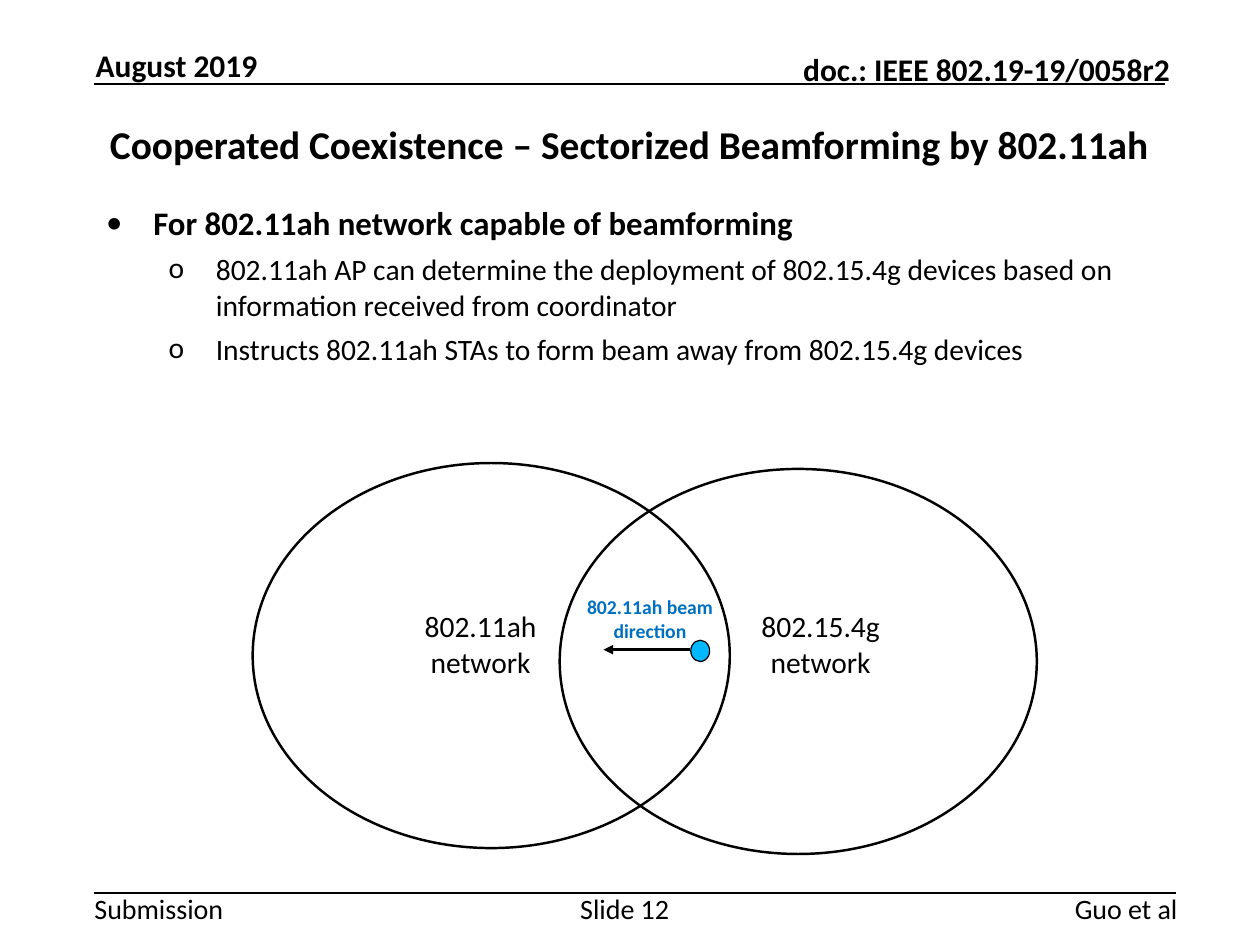
"""Build the slide on sectorized beamforming between two overlapping networks."""
from lxml.etree import SubElement
from pptx import Presentation
from pptx.dml.color import RGBColor
from pptx.enum.shapes import MSO_CONNECTOR, MSO_SHAPE
from pptx.enum.text import MSO_ANCHOR as Anchor, PP_ALIGN as Align
from pptx.oxml.ns import qn
from pptx.util import Emu, Pt

BLACK = RGBColor(0x00, 0x00, 0x00)
BLUE = RGBColor(0x00, 0x70, 0xC0)
CYAN = RGBColor(0x00, 0xB8, 0xFF)
FONT = "Calibri"
EMU_PER_PX = 9144


def px(length):
    return Emu(length * EMU_PER_PX)


def write(paragraph, text, size=18, bold=False, color=BLACK, align=Align.LEFT):
    paragraph.alignment = align
    run = paragraph.add_run()
    run.text = text
    run.font.name = FONT
    run.font.size = Pt(size)
    run.font.bold = bold
    run.font.color.rgb = color


class SlideBuilder:
    def __init__(self, slide):
        self.slide = slide

    def frame(self, left, top, width, height, inset=(10, 5), anchor=Anchor.TOP):
        box = self.slide.shapes.add_textbox(px(left), px(top), px(width), px(height))
        frame = box.text_frame
        frame.word_wrap = True
        frame.vertical_anchor = anchor
        frame.margin_left = frame.margin_right = px(inset[0])
        frame.margin_top = frame.margin_bottom = px(inset[1])
        return frame

    def text(self, bounds, text, inset=(10, 5), anchor=Anchor.TOP, **style):
        frame = self.frame(*bounds, inset=inset, anchor=anchor)
        write(frame.paragraphs[0], text, **style)

    def bullets(self, bounds, items):
        frame = self.frame(*bounds)
        for index, (level, text) in enumerate(items):
            paragraph = frame.paragraphs[0] if index == 0 else frame.add_paragraph()
            symbol, indent, space, size = [("•", 40, 6.4, 20), ("o", 93, 5.3, 18)][level]
            paragraph.level = level
            paragraph.space_before = Pt(space)
            write(paragraph, text, size=size, bold=level == 0)
            properties = paragraph._p.get_or_add_pPr()
            properties.set("marL", str(px(indent)))
            properties.set("indent", str(px(-40)))
            SubElement(properties, qn("a:buFont"), typeface=FONT)
            SubElement(properties, qn("a:buChar"), char=symbol)

    def ellipse(self, left, top, width, height, fill=None, weight=1.5):
        shape = self.slide.shapes.add_shape(
            MSO_SHAPE.OVAL, px(left), px(top), px(width), px(height))
        shape.shadow.inherit = False
        if fill is None:
            shape.fill.background()
        else:
            shape.fill.solid()
            shape.fill.fore_color.rgb = fill
        shape.line.color.rgb = BLACK
        shape.line.width = Pt(weight)

    def line(self, start, end, y, weight=1, arrow=False):
        connector = self.slide.shapes.add_connector(
            MSO_CONNECTOR.STRAIGHT, px(start), px(y), px(end), px(y))
        connector.line.color.rgb = BLACK
        connector.line.width = Pt(weight)
        if arrow:
            SubElement(connector.line._get_or_add_ln(), qn("a:tailEnd"), type="triangle")
        SubElement(connector._element.spPr, qn("a:effectLst"))


def main():
    presentation = Presentation()
    presentation.slide_width = px(1067)
    presentation.slide_height = px(800)
    builder = SlideBuilder(presentation.slides.add_slide(presentation.slide_layouts[6]))

    builder.line(80, 987, 71)
    builder.line(80, 996, 756)
    header = dict(inset=(0, 0), anchor=Anchor.BOTTOM, size=19.2, bold=True)
    builder.text((81, 39, 269, 32), "August 2019", **header)
    builder.text((583, 42, 408, 32), "doc.: IEEE 802.19-19/0058r2", align=Align.RIGHT, **header)
    footer = dict(inset=(0, 0), size=17.1)
    builder.text((80, 755, 112, 29), "Submission", **footer)
    builder.text((489, 755, 80, 42), "Slide 12", align=Align.CENTER, **footer)
    builder.text((642, 755, 355, 21), "Guo et al", align=Align.RIGHT, **footer)

    builder.text((80, 80, 906, 84),
                 "Cooperated Coexistence – Sectorized Beamforming by 802.11ah",
                 anchor=Anchor.MIDDLE, size=24, bold=True, align=Align.CENTER)
    builder.bullets((80, 167, 906, 589), [
        (0, "For 802.11ah network capable of beamforming"),
        (1, "802.11ah AP can determine the deployment of 802.15.4g devices "
            "based on information received from coordinator"),
        (1, "Instructs 802.11ah STAs to form beam away from 802.15.4g devices"),
    ])

    networks = [("802.11ah network", 214, 392, 344), ("802.15.4g network", 474, 397, 632)]
    for name, left, top, label_left in networks:
        builder.ellipse(left, top, 404, 326)
        builder.text((label_left, 510, 126, 71), name, align=Align.CENTER)
    builder.ellipse(585, 542, 16, 18, fill=CYAN, weight=0.75)
    builder.line(584, 511, 550, weight=1.5, arrow=True)
    builder.text((477, 499, 147, 50), "802.11ah beam direction",
                 size=12, bold=True, color=BLUE, align=Align.CENTER)

    presentation.save("out.pptx")


if __name__ == "__main__":
    main()
